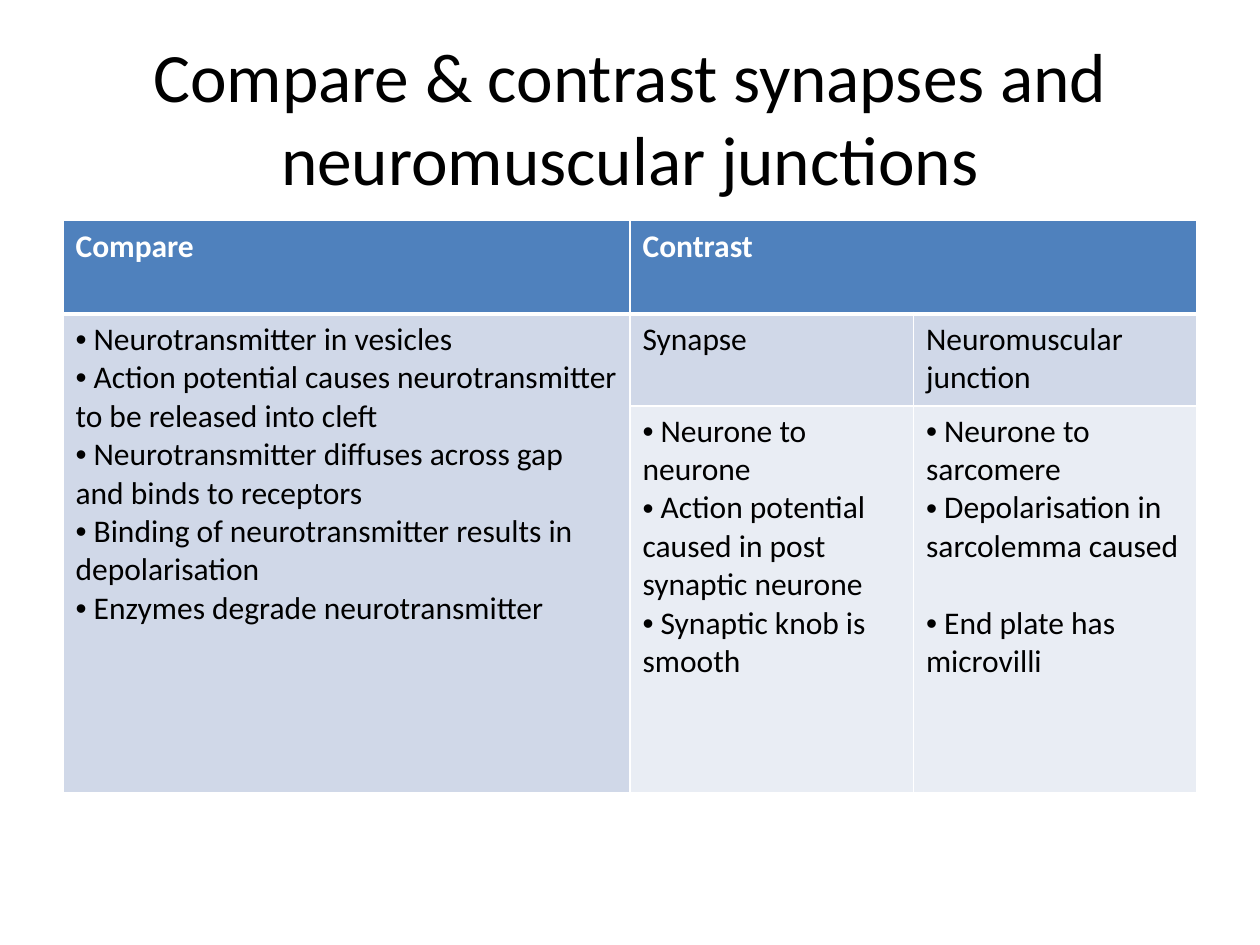
from lxml import etree
from pptx import Presentation
from pptx import util as u
from pptx.dml.color import RGBColor
from pptx.enum import text
from pptx.oxml.ns import qn

THEME = {
    "font": "Calibri",
    "title_size": u.Pt(39.6),
    "table_size": u.Pt(18),
    "ink": RGBColor.from_string("000000"),
    "white": RGBColor.from_string("FFFFFF"),
    "header": RGBColor.from_string("4F81BD"),
    "band_dark": RGBColor.from_string("D0D8E8"),
    "band_light": RGBColor.from_string("E9EDF4"),
}


def format_font(font, size, color, bold=False):
    for name, value in {"name": THEME["font"], "size": size, "bold": bold}.items():
        setattr(font, name, value)
    font.color.rgb = color


def set_borders(cell, bottom_width):
    """Draw white cell edges, 1 pt except for the bottom one."""
    properties = cell._tc.get_or_add_tcPr()
    for index, side in enumerate(("lnL", "lnR", "lnT", "lnB")):
        width = bottom_width if side == "lnB" else 1
        line = etree.Element(qn(f"a:{side}"), w=str(u.Pt(width)))
        fill = etree.SubElement(line, qn("a:solidFill"))
        etree.SubElement(fill, qn("a:srgbClr"), val=str(THEME["white"]))
        properties.insert(index, line)


presentation = Presentation()
presentation.slide_width, presentation.slide_height = u.Cm(25.4), u.Cm(19.05)
slide = presentation.slides.add_slide(presentation.slide_layouts[5])

title = slide.shapes.title
title_box = {"left": 1.27, "top": 0.76, "width": 22.86, "height": 3.18}
for name, value in title_box.items():
    setattr(title, name, u.Cm(value))
title.text_frame.text = "Compare & contrast synapses and neuromuscular junctions"
title.text_frame.vertical_anchor = text.MSO_ANCHOR.MIDDLE
title_paragraph = title.text_frame.paragraphs[0]
title_paragraph.alignment = text.PP_ALIGN.CENTER
format_font(title_paragraph.runs[0].font, THEME["title_size"], THEME["ink"])

column_widths = (11.43, 5.715, 5.715)
row_heights = (1.88, 1.85, 7.8)
table = slide.shapes.add_table(
    len(row_heights), len(column_widths), u.Cm(1.27), u.Cm(4.45),
    u.Cm(sum(column_widths)), u.Cm(sum(row_heights)),
).table
for column, width in zip(table.columns, column_widths):
    column.width = u.Cm(width)
for row, height in zip(table.rows, row_heights):
    row.height = u.Cm(height)
table.cell(0, 1).merge(table.cell(0, 2))
table.cell(1, 0).merge(table.cell(2, 0))

# A string is a plain cell, a list is a bulleted one.
contents = {
    (0, 0): "Compare",
    (0, 1): "Contrast",
    (1, 0): [
        "Neurotransmitter in vesicles",
        "Action potential causes neurotransmitter to be released into cleft",
        "Neurotransmitter diffuses across gap and binds to receptors",
        "Binding of neurotransmitter results in depolarisation",
        "Enzymes degrade neurotransmitter",
    ],
    (1, 1): "Synapse",
    (1, 2): "Neuromuscular junction",
    (2, 1): [
        "Neurone to neurone",
        "Action potential caused in post synaptic neurone",
        "Synaptic knob is smooth",
    ],
    (2, 2): [
        "Neurone to sarcomere",
        "Depolarisation in sarcolemma caused",
        "End plate has microvilli",
    ],
}
row_fills = (THEME["header"], THEME["band_dark"], THEME["band_light"])

for row_index, fill_color in enumerate(row_fills):
    is_header = row_index == 0
    for column_index in range(len(column_widths)):
        cell = table.cell(row_index, column_index)
        cell.fill.solid()
        cell.fill.fore_color.rgb = fill_color
        set_borders(cell, 3 if is_header else 1)
        content = contents.get((row_index, column_index))
        if content is None:
            continue
        bulleted = isinstance(content, list)
        lines = [f" {item}" for item in content] if bulleted else [content]
        cell.text_frame.text = "\n".join(lines)
        for paragraph in cell.text_frame.paragraphs:
            format_font(paragraph.runs[0].font, THEME["table_size"],
                        THEME["white"] if is_header else THEME["ink"], is_header)
            if bulleted:
                properties = paragraph._p.get_or_add_pPr()
                etree.SubElement(properties, qn("a:buFont"), typeface="Arial")
                etree.SubElement(properties, qn("a:buChar"), char="•")

# One line of space keeps the last points of both columns level.
table.cell(2, 2).text_frame.paragraphs[-1].space_before = u.Pt(22)

presentation.save("out.pptx")
